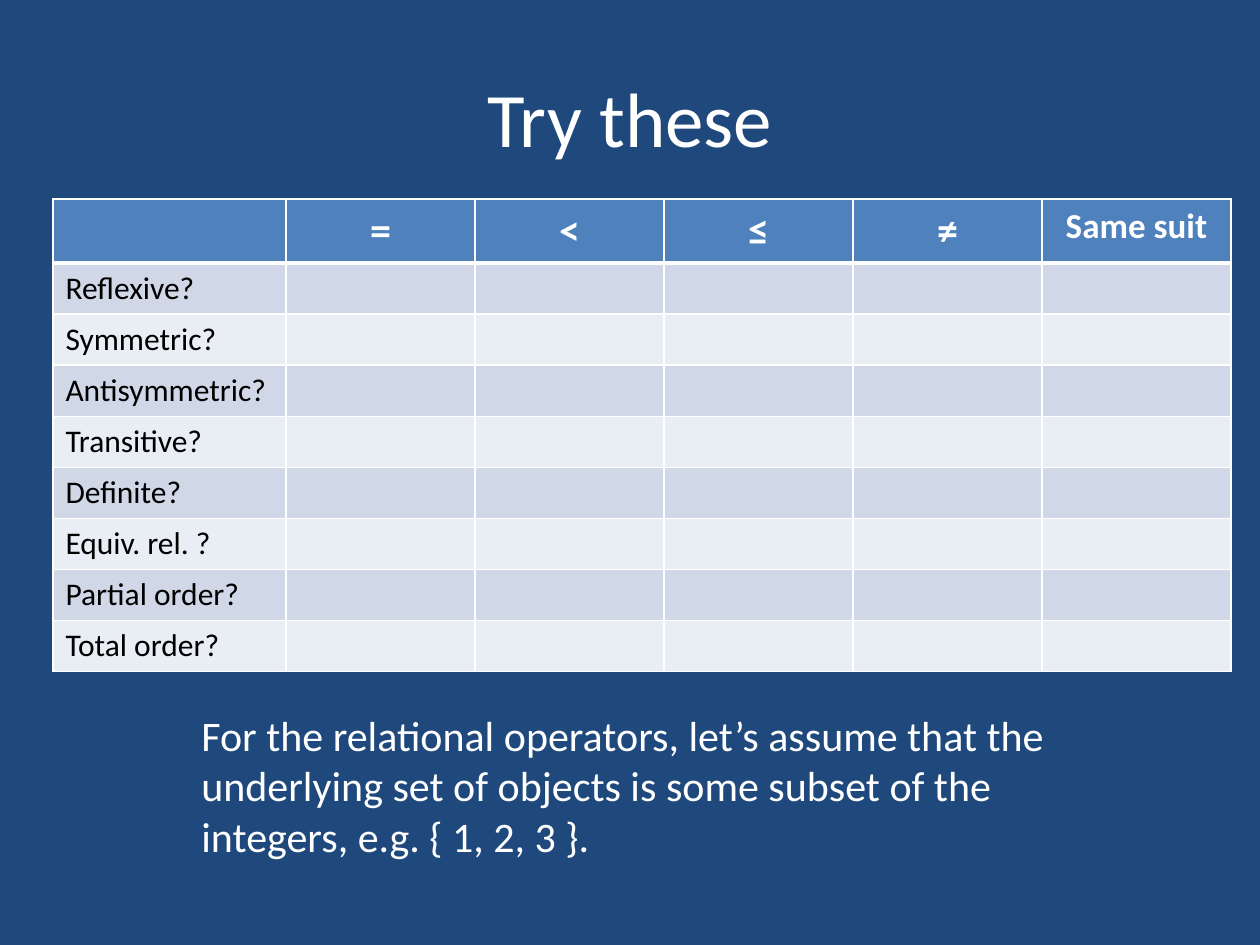
"""Build a slide with a worksheet table on properties of relations."""
from dataclasses import dataclass
from typing import Optional

from lxml.etree import SubElement
from pptx import Presentation
from pptx.dml.color import RGBColor as Rgb
from pptx.enum.text import MSO_ANCHOR as Anchor, PP_ALIGN as Align
from pptx.oxml.ns import qn
from pptx.util import Inches, Pt


@dataclass(frozen=True)
class Theme:
    font: str = "Calibri"
    back: str = "1F497D"
    head: str = "4F81BD"
    bands: tuple = ("D0D8E8", "E9EDF4")
    light: str = "FFFFFF"
    dark: str = "000000"
    title: int = 44
    large: int = 24
    label: int = 20
    body: int = 18
    line: int = 1
    rule: int = 3


@dataclass(frozen=True)
class Box:
    left: float
    top: float
    width: float
    height: float

    def emu(self) -> tuple:
        return tuple(map(Inches, (self.left, self.top, self.width, self.height)))


@dataclass(frozen=True)
class Words:
    text: str
    size: int
    color: str
    bold: bool = False
    align: Optional[Align] = None


THEME = Theme()
HEADS = ("", "=", "<", "≤", "≠", "Same suit")
TESTS = ("Reflexive?", "Symmetric?", "Antisymmetric?", "Transitive?",
         "Definite?", "Equiv. rel. ?", "Partial order?", "Total order?")
NOTE = ("For the relational operators, let’s assume that the underlying set "
        "of objects is some subset of the integers, e.g. { 1, 2, 3 }.")


def write(frame, words: Words) -> None:
    para = frame.paragraphs[0]
    if words.align is not None:
        para.alignment = words.align
    run = para.add_run()
    run.text = words.text
    font = run.font
    font.name, font.size, font.bold = THEME.font, Pt(words.size), words.bold
    font.color.rgb = Rgb.from_string(words.color)


def border(cell, top: int, base: int) -> None:
    props = cell._tc.get_or_add_tcPr()
    sides = {"L": THEME.line, "R": THEME.line, "T": top, "B": base}
    for side, width in sides.items():
        line = SubElement(props, qn(f"a:ln{side}"), w=str(Pt(width)))
        fill = SubElement(line, qn("a:solidFill"))
        SubElement(fill, qn("a:srgbClr"), val=THEME.light)


def paint(cell, color: str) -> None:
    cell.fill.solid()
    cell.fill.fore_color.rgb = Rgb.from_string(color)


def add_head(table) -> None:
    for cell, text in zip(table.rows[0].cells, HEADS):
        border(cell, THEME.line, THEME.rule)
        paint(cell, THEME.head)
        if text:
            size = THEME.large if len(text) == 1 else THEME.label
            write(cell.text_frame,
                  Words(text, size, THEME.light, True, Align.CENTER))


def add_rows(table) -> None:
    for row, test in enumerate(TESTS, 1):
        cells = list(table.rows[row].cells)
        for cell in cells:
            border(cell, THEME.rule if row == 1 else THEME.line, THEME.line)
            paint(cell, THEME.bands[(row - 1) % 2])
        write(cells[0].text_frame, Words(test, THEME.body, THEME.dark))


def add_grid(slide, box: Box, first: float, rest: float) -> None:
    table = slide.shapes.add_table(
        len(TESTS) + 1, len(HEADS), *box.emu()).table
    for index, col in enumerate(table.columns):
        col.width = Inches(rest if index else first)
    add_head(table)
    add_rows(table)


def add_title(slide, box: Box, text: str) -> None:
    title = slide.shapes.title
    title.left, title.top, title.width, title.height = box.emu()
    title.text_frame.vertical_anchor = Anchor.MIDDLE
    write(title.text_frame,
          Words(text, THEME.title, THEME.light, align=Align.CENTER))


def add_note(slide, box: Box, text: str) -> None:
    frame = slide.shapes.add_textbox(*box.emu()).text_frame
    frame.word_wrap = True
    write(frame, Words(text, THEME.large, THEME.light))


def main() -> None:
    deck = Presentation()
    deck.slide_width, deck.slide_height = Inches(10), Inches(7.5)
    slide = deck.slides.add_slide(deck.slide_layouts[5])
    fill = slide.background.fill
    fill.solid()
    fill.fore_color.rgb = Rgb.from_string(THEME.back)
    add_title(slide, Box(0.5, 0.3, 9, 1.25), "Try these")
    add_grid(slide, Box(0.42, 1.58, 9.35, 3.65), 1.85, 1.5)
    add_note(slide, Box(1.5, 5.58, 7, 1.31), NOTE)
    deck.save("out.pptx")


if __name__ == "__main__":
    main()
